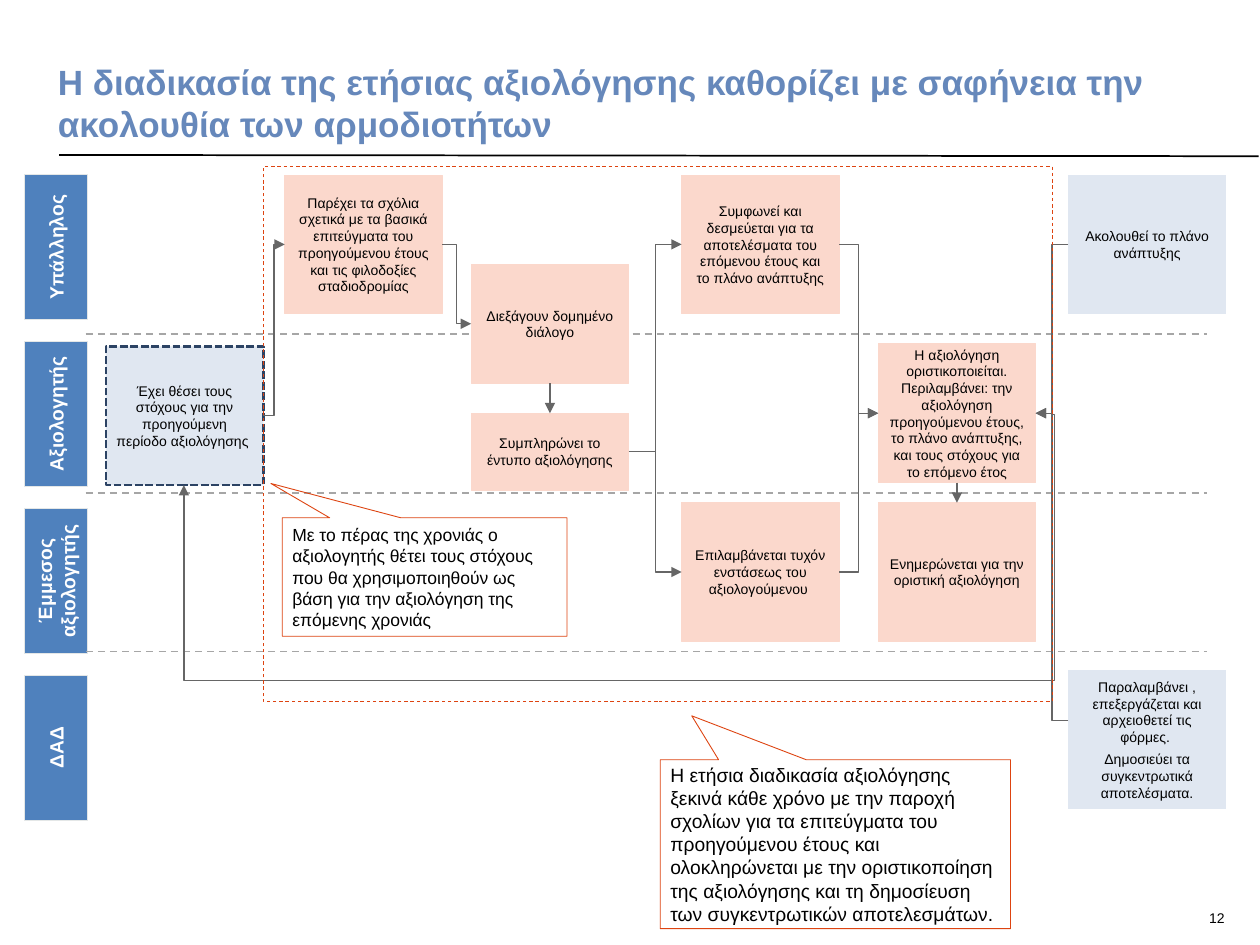
from pptx import Presentation
from pptx.dml.color import RGBColor
from pptx.enum.dml import MSO_LINE
from pptx.enum.shapes import MSO_CONNECTOR, MSO_SHAPE
from pptx.enum.text import MSO_ANCHOR, PP_ALIGN
from pptx.oxml.ns import qn
from pptx.util import Inches, Pt
from lxml.etree import SubElement

PINK, PALE, BLUE, RED, GREY = "FBD8CC", "E0E7F1", "4F81BD", "DD4411", "666666"

deck = Presentation()
deck.slide_width, deck.slide_height = Inches(10), Inches(7.5)
slide = deck.slides.add_slide(deck.slide_layouts[5])


def shape(kind, at, text, fill, edge, size=8, color="000000", bold=False,
          align=PP_ALIGN.CENTER, inset=0.08, after=3, width=0.5):
    new = slide.shapes.add_shape(kind, *map(Inches, at))
    new.shadow.inherit = False
    if fill:
        new.fill.solid()
        new.fill.fore_color.rgb = RGBColor.from_string(fill)
    else:
        new.fill.background()
    new.line.color.rgb = RGBColor.from_string(edge)
    new.line.width = Pt(width)
    frame = new.text_frame
    frame.word_wrap = True
    frame.vertical_anchor = MSO_ANCHOR.MIDDLE
    frame.margin_left = frame.margin_right = Inches(inset)
    frame.margin_top = frame.margin_bottom = Inches(inset)
    frame.text = text
    for par in frame.paragraphs:
        par.alignment = align
        par.space_after = Pt(after)
        par.font.name, par.font.size, par.font.bold = "Arial", Pt(size), bold
        par.font.color.rgb = RGBColor.from_string(color)
    return new


def link(start, end, color=GREY, width=0.75, kind=MSO_CONNECTOR.STRAIGHT, arrow=True):
    new = slide.shapes.add_connector(kind, *map(Inches, (*start, *end)))
    new.line.color.rgb = RGBColor.from_string(color)
    new.line.width = Pt(width)
    if arrow:
        SubElement(new.line._get_or_add_ln(), qn("a:tailEnd"), type="triangle")
    SubElement(new._element.spPr, qn("a:effectLst"))
    return new


# Title, rule and page number
title = slide.shapes.title
title.left, title.top, title.width, title.height = map(Inches, (0.46, 0.2, 9.06, 0.95))
page = slide.shapes.add_textbox(*map(Inches, (9.29, 7.18, 0.43, 0.25)))
for box, text, size, color, bold, align, anchor in (
    (title, "Η διαδικασία της ετήσιας αξιολόγησης καθορίζει με σαφήνεια την "
     "ακολουθία των αρμοδιοτήτων", 20, "6688BB", True, PP_ALIGN.LEFT, MSO_ANCHOR.BOTTOM),
    (page, "12", 8, "000000", False, PP_ALIGN.RIGHT, MSO_ANCHOR.TOP),
):
    frame = box.text_frame
    frame.text = text
    frame.word_wrap = True
    frame.vertical_anchor = anchor
    frame.margin_left = frame.margin_right = frame.margin_bottom = 0
    frame.margin_top = Inches(0.04 if box is page else 0)
    par = frame.paragraphs[0]
    par.alignment = align
    par.font.name, par.font.size, par.font.bold = "Arial", Pt(size), bold
    par.font.color.rgb = RGBColor.from_string(color)
link((0.47, 1.23), (9.99, 1.24), "000000", 1, arrow=False)

# Lanes: one label each, a dashed line between them
lanes = "Υπάλληλος", "Αξιολογητής", "Έμμεσος αξιολογητής", "ΔΑΔ"
for row, name in enumerate(lanes):
    label = shape(MSO_SHAPE.RECTANGLE, (-0.13, 1.71 + 1.325 * row, 1.15, 0.5), name,
                  BLUE, "E4E7E7", 11, "FFFFFF", True, inset=0)
    label.rotation = 270
for row in range(3):
    y = 2.65 + 1.26 * row
    line = link((0.68, y), (9.58, y), "A6A6A6", 1, arrow=False)
    line.line.dash_style = MSO_LINE.DASH

# Steps: column, top, height, fill, space after, text
cols = 0.84, 2.26, 3.74, 5.41, 6.97, 8.48
wide, tall = 1.25, 1.1
steps = {
    "goals": (0, 2.75, tall, PALE, 3,
              "Έχει θέσει τους στόχους για την προηγούμενη περίοδο αξιολόγησης "),
    "notes": (1, 1.39, tall, PINK, 3,
              "Παρέχει τα σχόλια σχετικά με τα βασικά επιτεύγματα του προηγούμενου "
              "έτους και τις φιλοδοξίες σταδιοδρομίας"),
    "talk": (2, 2.1, 0.94, PINK, 3, "Διεξάγουν δομημένο διάλογο"),
    "form": (2, 3.28, 0.61, PINK, 3, "Συμπληρώνει το έντυπο αξιολόγησης"),
    "agree": (3, 1.39, tall, PINK, 3,
              "Συμφωνεί και δεσμεύεται για τα αποτελέσματα του επόμενου έτους "
              "και το πλάνο ανάπτυξης"),
    "object": (3, 3.99, tall, PINK, 0,
               "Επιλαμβάνεται τυχόν ενστάσεως του αξιολογούμενου "),
    "final": (4, 2.73, tall, PINK, 3,
              "Η αξιολόγηση οριστικοποιείται. Περιλαμβάνει: την αξιολόγηση "
              "προηγούμενου έτους, το πλάνο ανάπτυξης, και τους στόχους για το "
              "επόμενο έτος"),
    "inform": (4, 3.99, tall, PINK, 0, "Ενημερώνεται για την οριστική αξιολόγηση"),
    "plan": (5, 1.39, tall, PALE, 3, "Ακολουθεί το πλάνο ανάπτυξης"),
    "file": (5, 5.32, tall, PALE, 3,
             "Παραλαμβάνει , επεξεργάζεται και αρχειοθετεί τις φόρμες. \n"
             "Δημοσιεύει τα συγκεντρωτικά αποτελέσματα."),
}
boxes, mids = {}, {}
for key, (col, top, high, fill, after, text) in steps.items():
    boxes[key] = shape(MSO_SHAPE.RECTANGLE, (cols[col], top, wide, high), text,
                       fill, fill, after=after)
    mids[key] = cols[col], top + high / 2
goals = boxes["goals"].line
goals.color.rgb = RGBColor.from_string("2C4364")
goals.width, goals.dash_style = Pt(1.5), MSO_LINE.SQUARE_DOT

# Flow: elbows run from side to side, straight arrows from bottom to top
for a, b in (("goals", "notes"), ("notes", "talk"), ("agree", "final"),
             ("object", "final"), ("form", "agree"), ("form", "object")):
    (x, y), end = mids[a], mids[b]
    link((x + wide, y), end, kind=MSO_CONNECTOR.ELBOW)
x, y = mids["final"]
for start in (mids["plan"], (cols[5], 5.72)):
    link(start, (x + wide, y), kind=MSO_CONNECTOR.ELBOW)
for a, b in (("talk", "form"), ("final", "inform")):
    line = link(mids[a], mids[b])
    line.begin_connect(boxes[a], 2)
    line.end_connect(boxes[b], 0)

# Return path to the goals, below all lanes it crosses
back = link((8.35, 3.29), (1.46, 3.85), kind=MSO_CONNECTOR.ELBOW)
geom = back._element.spPr.find(qn("a:prstGeom"))
geom.set("prst", "bentConnector4")
guides = geom.get_or_add_avLst()
for name, val in (("adj1", -300), ("adj2", 376700)):
    SubElement(guides, qn("a:gd"), name=name, fmla=f"val {val}")

# Yearly cycle and its callouts
cycle = shape(MSO_SHAPE.RECTANGLE, (2.09, 1.32, 6.26, 4.25), "", None, RED)
cycle.line.dash_style = MSO_LINE.DASH
for at, tip, size, text in (
    ((5.24, 6.03, 2.78, 1.34), (-0.41, -0.76), 11,
     "Η ετήσια διαδικασία αξιολόγησης ξεκινά κάθε χρόνο με την παροχή σχολίων για "
     "τα επιτεύγματα του προηγούμενου έτους και ολοκληρώνεται με την οριστικοποίηση "
     "της αξιολόγησης και τη δημοσίευση των συγκεντρωτικών αποτελεσμάτων."),
    ((2.24, 4.11, 2.26, 0.94), (-0.54, -0.79), 10,
     "Με το πέρας της χρονιάς ο αξιολογητής θέτει τους στόχους που θα "
     "χρησιμοποιηθούν ως βάση για την αξιολόγηση της επόμενης χρονιάς"),
):
    note = shape(MSO_SHAPE.RECTANGULAR_CALLOUT, at, text, None, RED, size,
                 align=PP_ALIGN.LEFT)
    note.adjustments[0], note.adjustments[1] = tip

deck.save("out.pptx")
